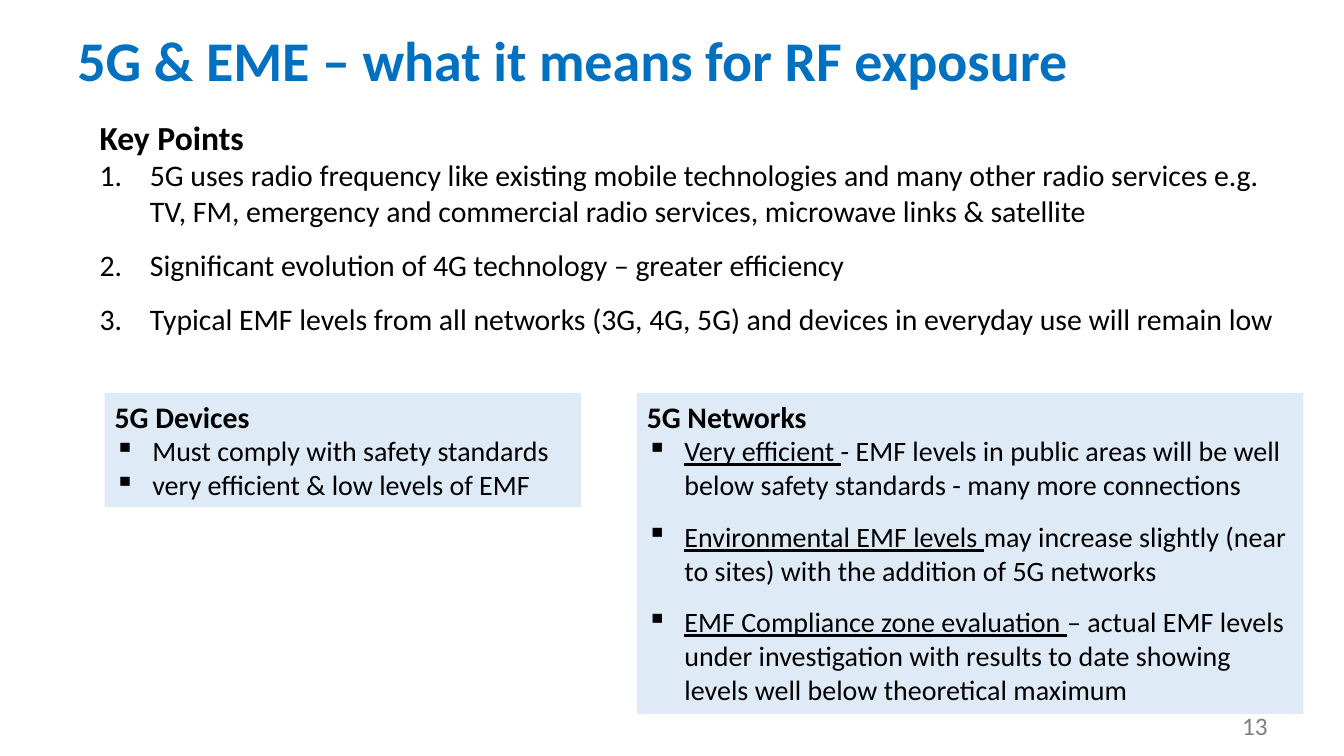
from lxml import etree
from pptx import Presentation
from pptx import util as u
from pptx.dml import color
from pptx.enum import shapes, text
from pptx.oxml import ns

COLOURS = {"title": "0070C0", "body": "000000", "panel": "DEEBF7", "number": "808080"}


class SlideWriter:
    """Holds the text style and the current slide."""

    def __init__(self, page, font="Calibri", gap=13):
        self.page = page
        self.font = font
        self.gap = u.Pt(gap)

    def place(self, bounds):
        return [u.Cm(length) for length in bounds]

    def frame(self, box, anchor=text.MSO_ANCHOR.TOP):
        frame = box.text_frame
        frame.word_wrap = True
        frame.vertical_anchor = anchor
        return frame

    def textbox(self, bounds, anchor=text.MSO_ANCHOR.TOP):
        box = self.page.shapes.add_textbox(*self.place(bounds))
        return self.frame(box, anchor)

    def panel(self, bounds):
        box = self.page.shapes.add_shape(shapes.MSO_SHAPE.RECTANGLE, *self.place(bounds))
        box.shadow.inherit = False
        box.fill.solid()
        box.fill.fore_color.rgb = color.RGBColor.from_string(COLOURS["panel"])
        box.line.fill.background()
        return self.frame(box)

    def span(self, para, words, size, colour="body", bold=False, underline=False):
        span = para.add_run()
        span.text = words
        span.font.name = self.font
        span.font.size = u.Pt(size)
        span.font.bold = bold
        span.font.underline = underline
        span.font.color.rgb = color.RGBColor.from_string(COLOURS[colour])

    def line(self, frame, words, size, colour="body", bold=False, align=text.PP_ALIGN.LEFT):
        para = frame.paragraphs[0]
        para.alignment = align
        self.span(para, words, size, colour, bold)
        return para

    def items(self, frame, entries, size, indent, bullet, spaced=True):
        tag, key, value = bullet
        for index, (lead, rest) in enumerate(entries):
            para = frame.add_paragraph()
            para.alignment = text.PP_ALIGN.LEFT
            properties = para._p.get_or_add_pPr()
            properties.set("marL", str(u.Cm(indent)))
            properties.set("indent", str(-u.Cm(indent)))
            etree.SubElement(properties, ns.qn(tag)).set(key, value)
            if spaced and index:
                para.space_before = self.gap
            if lead:
                self.span(para, lead, size, underline=True)
            self.span(para, rest, size)


def main():
    deck = Presentation()
    deck.slide_width, deck.slide_height = u.Cm(33.87), u.Cm(19.05)
    writer = SlideWriter(deck.slides.add_slide(deck.slide_layouts[6]))
    numbered = ("a:buAutoNum", "type", "arabicPeriod")
    square = ("a:buChar", "char", "▪")

    title = writer.textbox((1.7, 0, 30.48, 3.18), text.MSO_ANCHOR.MIDDLE)
    heading = writer.line(title, "5G & EME – what it means for RF exposure", 40, "title", True)
    heading.line_spacing = 0.9

    key_points = writer.textbox((2.26, 2.82, 30.68, 5.84))
    writer.line(key_points, "Key Points", 24, bold=True)
    writer.items(key_points, [
        ("", "5G uses radio frequency like existing mobile technologies and many other radio "
             "services e.g. TV, FM, emergency and commercial radio services, microwave links "
             "& satellite"),
        ("", "Significant evolution of 4G technology – greater efficiency"),
        ("", "Typical EMF levels from all networks (3G, 4G, 5G) and devices in everyday use "
             "will remain low"),
    ], 21.3, 1.27, numbered)

    devices = writer.panel((2.64, 9.91, 12, 2.87))
    writer.line(devices, "5G Devices", 21.3, bold=True)
    writer.items(devices, [
        ("", "Must comply with safety standards"),
        ("", "very efficient & low levels of EMF"),
    ], 20, 0.95, square, spaced=False)

    networks = writer.panel((16.05, 9.91, 16.8, 8.08))
    writer.line(networks, "5G Networks", 21.3, bold=True)
    writer.items(networks, [
        ("Very efficient ", "- EMF levels in public areas will be well below safety standards "
                            "- many more connections"),
        ("Environmental EMF levels ", "may increase slightly (near to sites) with the addition "
                                      "of 5G networks"),
        ("EMF Compliance zone evaluation ", "– actual EMF levels under investigation with "
                                            "results to date showing levels well below "
                                            "theoretical maximum"),
    ], 20, 0.95, square)

    number = writer.textbox((30.28, 17.78, 2.69, 1.02))
    writer.line(number, "13", 18, "number", align=text.PP_ALIGN.CENTER)
    deck.save("out.pptx")


if __name__ == "__main__":
    main()
